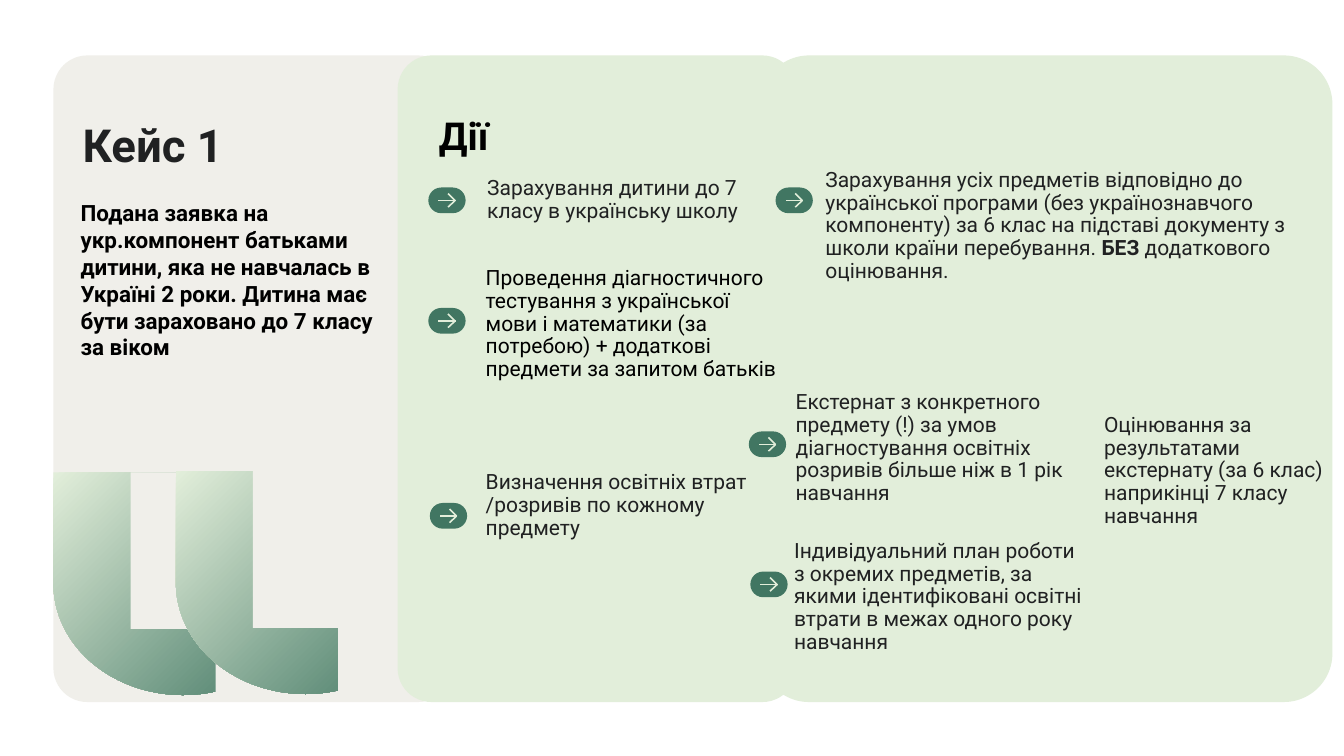
from lxml import etree
from pptx import Presentation
from pptx.dml.color import RGBColor
from pptx.enum.shapes import MSO_CONNECTOR, MSO_SHAPE
from pptx.enum.text import MSO_ANCHOR, MSO_AUTO_SIZE
from pptx.oxml.ns import qn
from pptx.util import Inches, Pt

ROUNDED = MSO_SHAPE.ROUNDED_RECTANGLE
RECTANGLE = MSO_SHAPE.RECTANGLE
DELAY = MSO_SHAPE.FLOWCHART_DELAY
STRAIGHT = MSO_CONNECTOR.STRAIGHT
TOP, MIDDLE = MSO_ANCHOR.TOP, MSO_ANCHOR.MIDDLE
GROW, FIXED = MSO_AUTO_SIZE.SHAPE_TO_FIT_TEXT, MSO_AUTO_SIZE.NONE

FONT = "Roboto"
BLACK = RGBColor(0x00, 0x00, 0x00)
INK = RGBColor(0x20, 0x21, 0x22)
SAND = RGBColor(0xF0, 0xEF, 0xEA)
MINT = RGBColor(0xE2, 0xEE, 0xDA)
GREEN = RGBColor(0x41, 0x76, 0x62)

PANEL_TOP, PANEL_HEIGHT, PANEL_RADIUS = 1.1, 12.83, 0.085
BADGE_WIDTH, BADGE_HEIGHT = 0.74, 0.51
ARROW_LINES = [
    (0.39, 0.12, 0.53, 0.26),
    (0.53, 0.26, 0.39, 0.39),
    (0.54, 0.26, 0.2, 0.26),
]
BADGES = [(8.53, 9.98), (8.5, 3.72), (8.5, 6.11),
          (14.86, 8.56), (14.89, 11.34), (15.39, 3.72)]
QUOTE_MARKS = [
    ((1.42, 9.01), [(2.59, 9.37, 2.26, 3.11), (4.28, 9.37, 2, 4.47)]),
    ((3.85, 8.99), [(5.02, 9.2, 3.73, 3.26), (6.71, 9.34, 2, 4.47)]),
]
STEPS = [
    ((9.57, 3.42, 6.03, 1.11), INK,
     [("Зарахування дитини до 7 класу в українську школу", False)]),
    ((9.54, 5.21, 6.01, 2.47), BLACK,
     [("Проведення діагностичного тестування з української мови і математики "
       "(за потребою) + додаткові предмети за запитом батьків", False)]),
    ((9.54, 9.26, 6.03, 1.57), INK,
     [("Визначення освітніх втрат /розривів по кожному предмету", False)]),
    ((16.28, 3.26, 9.42, 2.47), INK,
     [("Зарахування усіх предметів відповідно до української програми (без "
       "українознавчого компоненту) за 6 клас на підставі документу з школи "
       "країни перебування. ", False),
      ("БЕЗ ", True),
      ("додаткового оцінювання.", False)]),
    ((15.69, 7.67, 6.03, 2.47), INK,
     [("Екстернат з конкретного предмету (!) за умов діагностування освітніх "
       "розривів більше ніж в 1 рік навчання", False)]),
    ((21.81, 8.12, 4.85, 2.47), INK,
     [("Оцінювання за результатами екстернату (за 6 клас) наприкінці 7 класу "
       "навчання", False)]),
    ((15.66, 10.62, 6.03, 2.47), INK,
     [("Індивідуальний план роботи з окремих предметів, за якими ідентифіковані "
       "освітні втрати в межах одного року навчання", False)]),
]


class SlideBuilder:
    """Holds the current slide and draws its elements in one style."""

    def __init__(self, slide):
        self.slide = slide

    def shape(self, kind, box, color, radius=None, parent=None):
        shapes = (parent or self.slide).shapes
        shape = shapes.add_shape(kind, *map(Inches, box))
        shape.shadow.inherit = False
        shape.line.fill.background()
        shape.fill.solid()
        shape.fill.fore_color.rgb = color
        if radius is not None:
            shape.adjustments[0] = radius
        return shape

    def panel(self, left, width, color):
        box = (left, PANEL_TOP, width, PANEL_HEIGHT)
        self.shape(ROUNDED, box, color, PANEL_RADIUS)

    def quote_mark(self, corner, cutouts):
        group = self.slide.shapes.add_group_shape()
        mark = self.shape(DELAY, (*corner, 4.42, 5.14), MINT, parent=group)
        mark.rotation = 90
        mark.fill.gradient()
        mark.fill.gradient_angle = 45
        for stop, color in zip(mark.fill.gradient_stops, (MINT, GREEN)):
            stop.color.rgb = color
        for cutout in cutouts:
            self.shape(RECTANGLE, cutout, SAND, parent=group)

    def arrow_badge(self, left, top):
        group = self.slide.shapes.add_group_shape()
        box = (left, top, BADGE_WIDTH, BADGE_HEIGHT)
        self.shape(ROUNDED, box, GREEN, 0.5, group)
        for x1, y1, x2, y2 in ARROW_LINES:
            line = group.shapes.add_connector(
                STRAIGHT, Inches(left + x1), Inches(top + y1),
                Inches(left + x2), Inches(top + y2))
            line.line.color.rgb = MINT
            line.line.width = Pt(2.25)
            properties = line._element.find(qn("p:spPr"))
            etree.SubElement(properties, qn("a:effectLst"))

    def text(self, box, runs, size, color, spacing=None, before=None,
             inset=0.1, anchor=TOP, auto_size=GROW):
        frame = self.slide.shapes.add_textbox(*map(Inches, box)).text_frame
        frame.word_wrap = True
        frame.auto_size = auto_size
        frame.vertical_anchor = anchor
        frame.margin_left = frame.margin_right = Inches(inset)
        frame.margin_top = frame.margin_bottom = Inches(inset)
        paragraph = frame.paragraphs[0]
        paragraph.line_spacing = spacing
        paragraph.space_before = before
        for words, bold in runs:
            run = paragraph.add_run()
            run.text = words
            run.font.name = FONT
            run.font.size = Pt(size)
            run.font.bold = bold
            run.font.color.rgb = color


def main():
    presentation = Presentation()
    presentation.slide_width = Inches(26.67)
    presentation.slide_height = Inches(15)
    slide = presentation.slides.add_slide(presentation.slide_layouts[6])
    builder = SlideBuilder(slide)

    builder.panel(1.06, 7.91, SAND)
    builder.text((1.5, 3.85, 6.39, 3.43), [(
        "Подана заявка на укр.компонент батьками дитини, яка не навчалась в "
        "Україні 2 роки. Дитина має бути зараховано до 7 класу за віком", True)],
        32, BLACK)
    builder.text((1.58, 1.59, 7.31, 2.73), [("Кейс 1", True)], 65, INK,
                 spacing=0.8, inset=0.06, anchor=MIDDLE, auto_size=FIXED)
    for corner, cutouts in QUOTE_MARKS:
        builder.quote_mark(corner, cutouts)

    builder.panel(7.89, 7.91, MINT)
    builder.panel(15.09, 11.35, MINT)
    builder.text((8.61, 2.13, 6.96, 1.13), [("Дії", True)], 55, BLACK)
    for left, top in BADGES:
        builder.arrow_badge(left, top)
    for box, color, runs in STEPS:
        builder.text(box, runs, 30, color, spacing=0.9, before=Pt(45))

    presentation.save("out.pptx")


if __name__ == "__main__":
    main()
